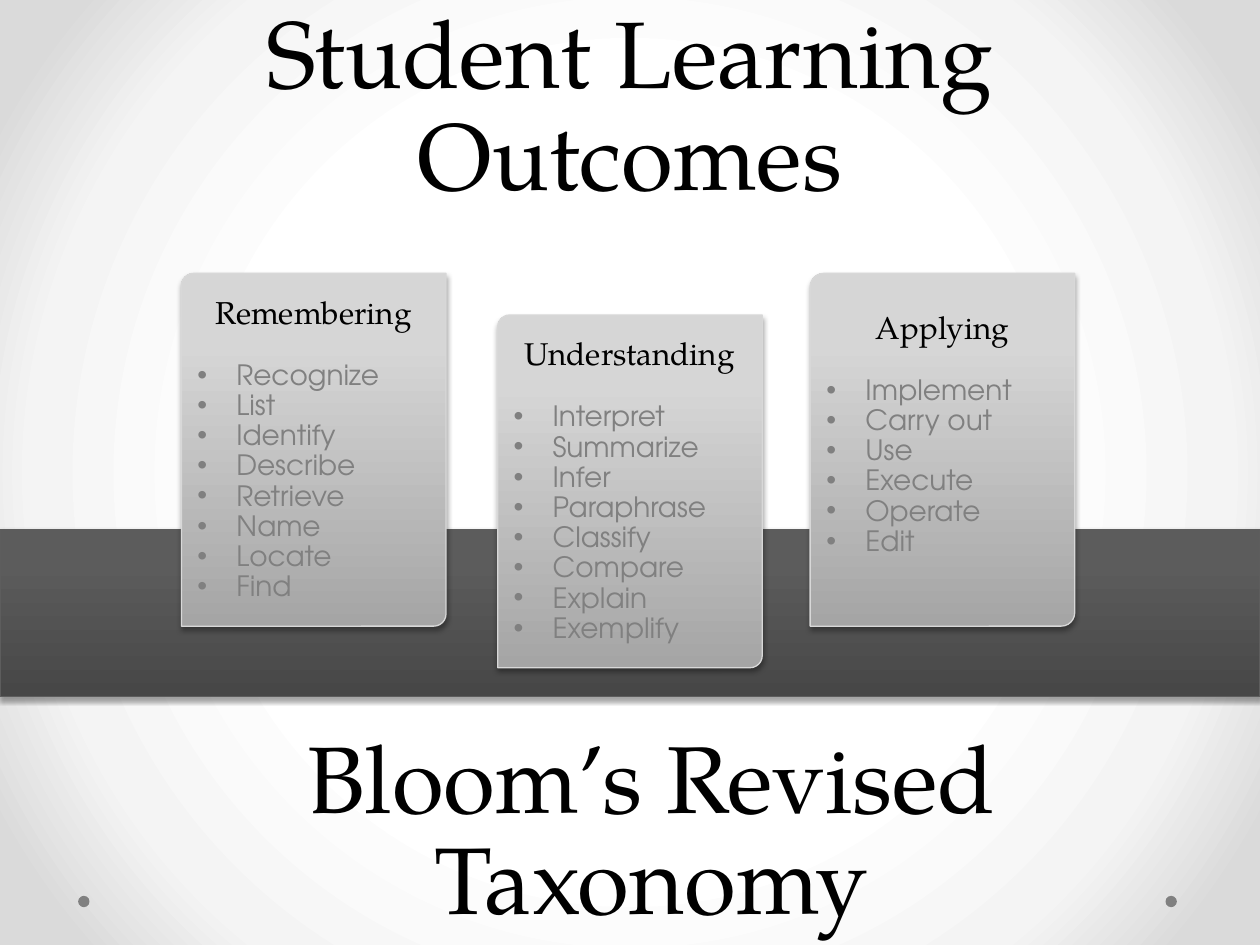
from lxml import etree
from pptx import Presentation
from pptx.dml.color import RGBColor
from pptx.enum.shapes import MSO_SHAPE
from pptx.enum.text import MSO_ANCHOR, PP_ALIGN
from pptx.oxml import parse_xml
from pptx.oxml.ns import nsdecls, qn
from pptx.util import Inches, Pt

COLORS = {"black": "000000", "grey": "808080", "band_line": "5D5D5D", "card_line": "D8D8D8"}
SERIF, SANS = "TeX Gyre Pagella", "TeX Gyre Adventor"
BACKDROP = [(50, "FFFFFF"), (76, "F4F4F4"), (92, "DADADA")]
BAND = [(0, "474747"), (80, "5C5C5C"), (100, "5C5C5C")]
CARD = [(0, "A5A5A5"), (80, "D6D6D6"), (100, "D7D7D7")]
UPWARD = '<a:lin ang="16200000" scaled="0"/>'
RADIAL = '<a:path path="circle"><a:fillToRect l="50000" t="50000" r="50000" b="50000"/></a:path>'


def set_gradient(owner, element, stops, direction):
    owner.fill.solid()
    solid = element.find(".//" + qn("a:solidFill"))
    gs = "".join(f'<a:gs pos="{pos * 1000}"><a:srgbClr val="{color}"/></a:gs>'
                 for pos, color in stops)
    solid.getparent().replace(solid, parse_xml(
        f'<a:gradFill {nsdecls("a")} rotWithShape="1"><a:gsLst>{gs}</a:gsLst>{direction}</a:gradFill>'))


def add_text(tf, text, size, font, color, align=PP_ALIGN.CENTER, spacing=0.9,
             after=0, bullet=False, first=False):
    p = tf.paragraphs[0] if first else tf.add_paragraph()
    p.alignment, p.line_spacing, p.space_after = align, spacing, Pt(after)
    if bullet:
        pPr = p._p.get_or_add_pPr()
        pPr.set("marL", str(Inches(0.31)))
        pPr.set("indent", str(-Inches(0.31)))
        etree.SubElement(pPr, qn("a:buFont")).set("typeface", "Arial")
        etree.SubElement(pPr, qn("a:buChar")).set("char", "•")
    r = p.add_run()
    r.text = text
    r.font.size, r.font.name = Pt(size), font
    r.font.color.rgb = RGBColor.from_string(COLORS[color])


prs = Presentation()
prs.slide_width, prs.slide_height = Inches(10), Inches(7.5)
s = prs.slides.add_slide(prs.slide_layouts[6])
set_gradient(s.background, s.element, BACKDROP, RADIAL)

# Corner dots
for x in (9.25, 0.62):
    sp = s.shapes.add_shape(MSO_SHAPE.OVAL, Inches(x), Inches(7.11), Inches(0.09), Inches(0.09))
    sp.shadow.inherit = False
    sp.fill.solid()
    sp.fill.fore_color.rgb = RGBColor.from_string(COLORS["grey"])
    sp.line.fill.background()

# Dark band and the three cards
band = s.shapes.add_shape(MSO_SHAPE.RECTANGLE, 0, Inches(4.2), Inches(10), Inches(1.33))
panels = [(band, BAND, "band_line")]
cards = [
    (1.44, 2.17, 0.046, 0.05, "Remembering",
     ["Recognize", "List", "Identify", "Describe", "Retrieve", "Name", "Locate", "Find"]),
    (3.95, 2.5, 0.046, 0.05, "Understanding",
     ["Interpret", "Summarize", "Infer", "Paraphrase", "Classify", "Compare", "Explain",
      "Exemplify"]),
    (6.43, 2.17, 0.051, 0.29, "Applying",
     ["Implement", "Carry out", "Use", "Execute", "Operate", "Edit"]),
]
for x, y, corner, bottom, heading, verbs in cards:
    sp = s.shapes.add_shape(MSO_SHAPE.ROUND_2_DIAG_RECTANGLE,
                            Inches(x), Inches(y), Inches(2.1), Inches(2.8))
    sp.adjustments[0], sp.adjustments[1] = corner, 0
    panels.append((sp, CARD, "card_line"))
    tf = sp.text_frame
    tf.word_wrap = True
    tf.vertical_anchor = MSO_ANCHOR.MIDDLE
    tf.margin_bottom = Inches(bottom)
    add_text(tf, heading, 18, SERIF, "black", after=17.3, first=True)
    for verb in verbs:
        add_text(tf, verb, 16, SANS, "grey", align=PP_ALIGN.LEFT, bullet=True)

# Gradient, outline and soft shadow shared by band and cards
for sp, stops, line in panels:
    set_gradient(sp, sp._element.spPr, stops, UPWARD)
    sp.line.color.rgb = RGBColor.from_string(COLORS[line])
    sp.line.width = Pt(0.75)
    sp.shadow.inherit = False
    sp._element.spPr.find(qn("a:effectLst")).append(parse_xml(
        f'<a:outerShdw {nsdecls("a")} blurRad="{Pt(3.1)}" dist="{Pt(1.8)}" dir="5400000" '
        f'rotWithShape="0"><a:srgbClr val="{COLORS["black"]}"><a:alpha val="35000"/>'
        '</a:srgbClr></a:outerShdw>'))

# Titles
for x, y, title in [(0.67, 5.75, "Bloom’s Revised Taxonomy"),
                    (0.5, 0, "Student Learning Outcomes")]:
    tf = s.shapes.add_textbox(Inches(x), Inches(y), Inches(9), Inches(1.75)).text_frame
    tf.word_wrap = True
    add_text(tf, title, 54, SERIF, "black", spacing=Pt(58), first=True)

prs.save("out.pptx")
